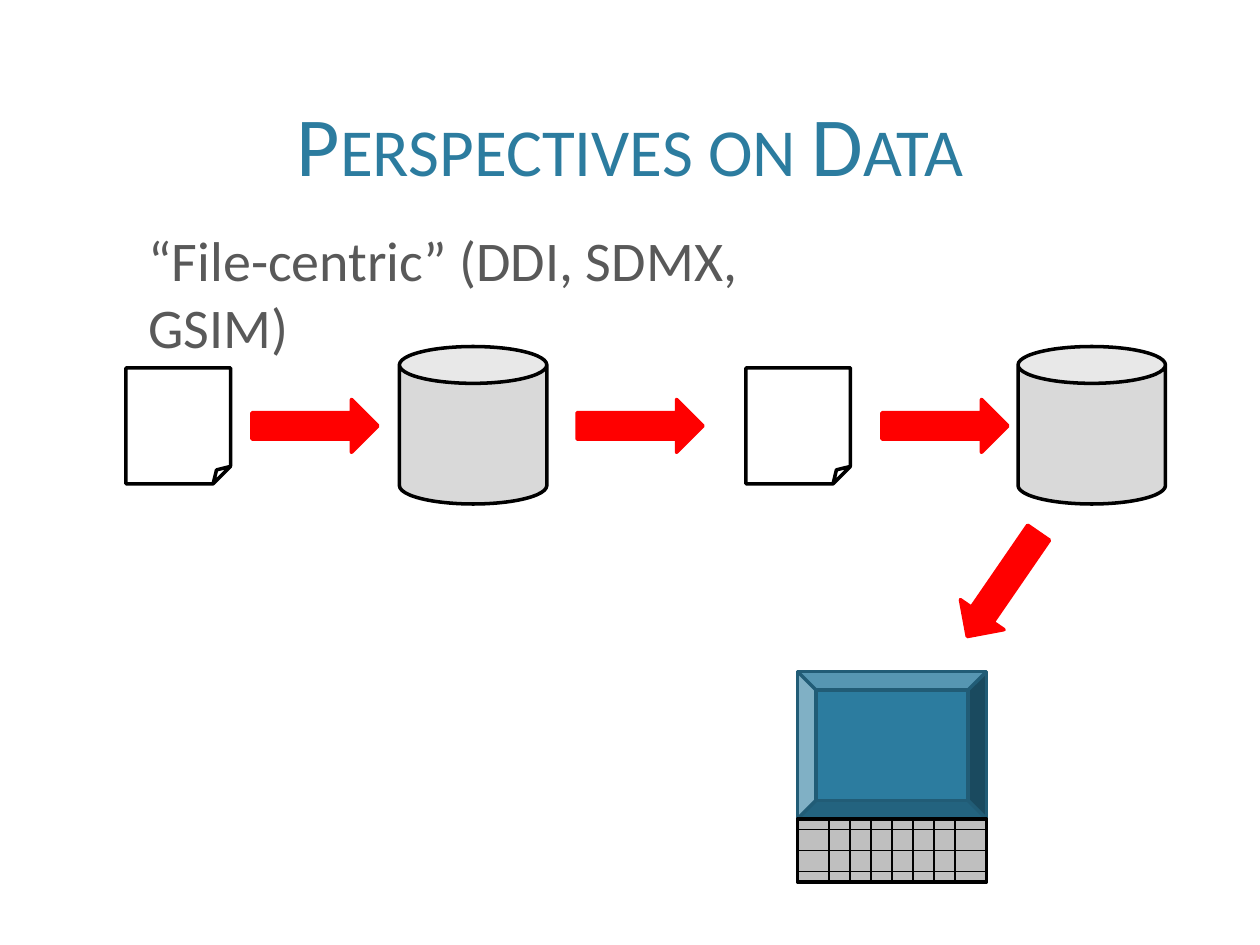
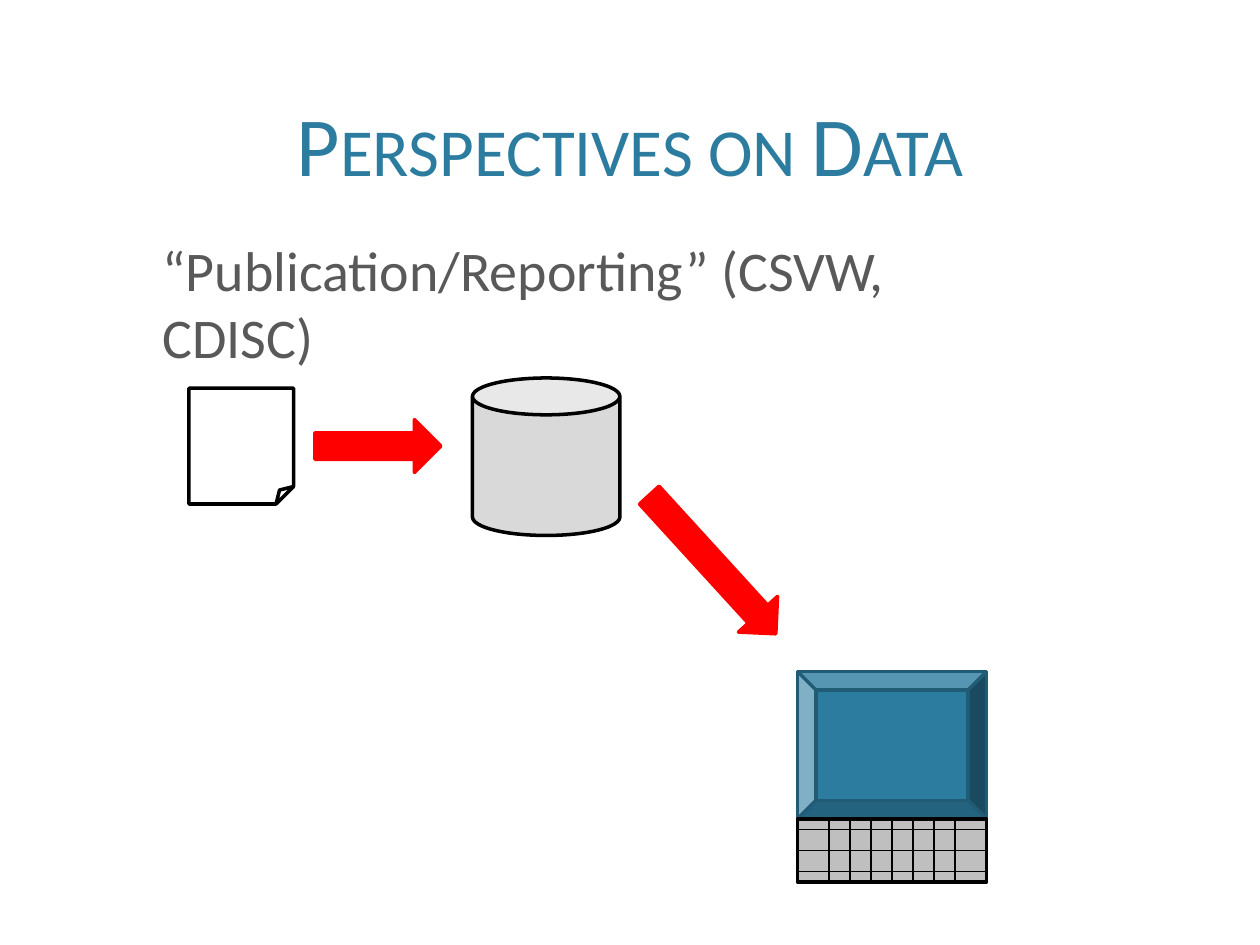
from pptx import Presentation
from pptx.dml.color import RGBColor
from pptx.enum.shapes import MSO_CONNECTOR, MSO_SHAPE
from pptx.enum.text import MSO_ANCHOR, MSO_AUTO_SIZE, PP_ALIGN
from pptx.oxml.ns import qn
from pptx.util import Inches, Pt
from lxml.etree import SubElement

BLUE, DARK_BLUE, TEXT_GREY = "2C7C9F", "215C76", "595959"
DRUM_GREY, KEY_GREY, RED, BLACK = "D9D9D9", "BFBFBF", "FF0000", "000000"
FONT = "Calibri"


def color(value):
    """Turn a hex string into a colour."""
    return RGBColor.from_string(value)


class DataFlowDeck:
    """Draw data flow diagrams in one style on the current slide."""

    def __init__(self):
        """Start a 4:3 presentation."""
        self.presentation = Presentation()
        self.presentation.slide_width = Inches(10)
        self.presentation.slide_height = Inches(7.5)
        self.slide = None

    def new_slide(self, title):
        """Add a blank slide with the shared title."""
        layout = self.presentation.slide_layouts[6]
        self.slide = self.presentation.slides.add_slide(layout)
        heading = self.text(title, 0.6, 0.12, 8.8, 1.46, 48, BLUE)
        heading.vertical_anchor = MSO_ANCHOR.BOTTOM
        paragraph = heading.paragraphs[0]
        paragraph.alignment = PP_ALIGN.CENTER
        paragraph.runs[0].font._element.set("cap", "small")

    def text(self, words, left, top, width, height, size, ink):
        """Add wrapped text and return its frame."""
        box = self.slide.shapes.add_textbox(
            Inches(left), Inches(top), Inches(width), Inches(height))
        frame = box.text_frame
        frame.word_wrap = True
        frame.text = words
        font = frame.paragraphs[0].runs[0].font
        font.name, font.size = FONT, Pt(size)
        font.color.rgb = color(ink)
        return frame

    def perspective(self, words, left, top, width):
        """Add the name of the perspective."""
        frame = self.text(words, left, top, width, 1.18, 32, TEXT_GREY)
        frame.auto_size = MSO_AUTO_SIZE.SHAPE_TO_FIT_TEXT

    def shape(self, kind, left, top, width, height, fill=None, line=BLACK, parent=None):
        """Add an outlined preset shape to the slide or to a group."""
        shapes = (parent or self.slide).shapes
        item = shapes.add_shape(
            kind, Inches(left), Inches(top), Inches(width), Inches(height))
        item.shadow.inherit = False
        if fill:
            item.fill.solid()
            item.fill.fore_color.rgb = color(fill)
        else:
            item.fill.background()
        item.line.color.rgb = color(line)
        item.line.width = Pt(2)
        return item

    def file(self, left, top):
        """Add a data file."""
        self.shape(MSO_SHAPE.FOLDED_CORNER, left, top, 0.83, 0.92)

    def database(self, left, top):
        """Add a database drum."""
        self.shape(MSO_SHAPE.CAN, left, top, 1.17, 1.25, DRUM_GREY)

    def arrow(self, left, top, length=1, angle=0):
        """Add a red flow arrow."""
        flow = self.shape(MSO_SHAPE.RIGHT_ARROW, left, top, length, 0.42, RED, RED)
        flow.rotation = angle

    def key_line(self, keyboard, x1, y1, x2, y2):
        """Add a thin line between keys."""
        gap = keyboard.shapes.add_connector(
            MSO_CONNECTOR.STRAIGHT, Inches(x1), Inches(y1), Inches(x2), Inches(y2))
        gap.line.color.rgb = color(BLACK)
        gap.line.width = Pt(1)
        SubElement(gap._element.spPr, qn("a:effectLst"))

    def computer(self, left=6.33, top=5.33):
        """Add a screen above a keyboard as one group."""
        width, screen_height, keys_height = 1.5, 1.17, 0.5
        keys_top = top + screen_height
        right, bottom = left + width, keys_top + keys_height
        group = self.slide.shapes.add_group_shape()
        self.shape(MSO_SHAPE.BEVEL, left, top, width, screen_height,
                   BLUE, DARK_BLUE, group)
        self.shape(MSO_SHAPE.RECTANGLE, left, keys_top, width, keys_height,
                   KEY_GREY, BLACK, group)
        for column in range(7):
            x = left + 0.25 + column / 6
            self.key_line(group, x, keys_top, x, bottom)
        for row in range(3):
            y = keys_top + 1 / 12 + row / 6
            self.key_line(group, left, y, right, y)


def main():
    """Build both perspectives and save them."""
    deck = DataFlowDeck()
    title = "Perspectives on Data"

    deck.new_slide(title)
    deck.perspective("“File-centric” (DDI, SDMX, GSIM)", 1.08, 1.74, 5.92)
    for file_left, database_left in ((1, 3.17), (5.92, 8.08)):
        deck.file(file_left, 2.92)
        deck.database(database_left, 2.75)
    for arrow_left in (2, 4.58, 7):
        deck.arrow(arrow_left, 3.17)
    deck.computer()
    deck.arrow(7.46, 4.43, angle=124.5)

    deck.new_slide(title)
    deck.perspective("“Publication/Reporting” (CSVW, CDISC)", 1.19, 1.82, 7)
    deck.file(1.5, 3.08)
    deck.database(3.75, 3)
    deck.arrow(2.5, 3.33)
    deck.computer()
    deck.arrow(4.91, 4.27, length=1.49, angle=47.6)

    deck.presentation.save("out.pptx")


if __name__ == "__main__":
    main()
